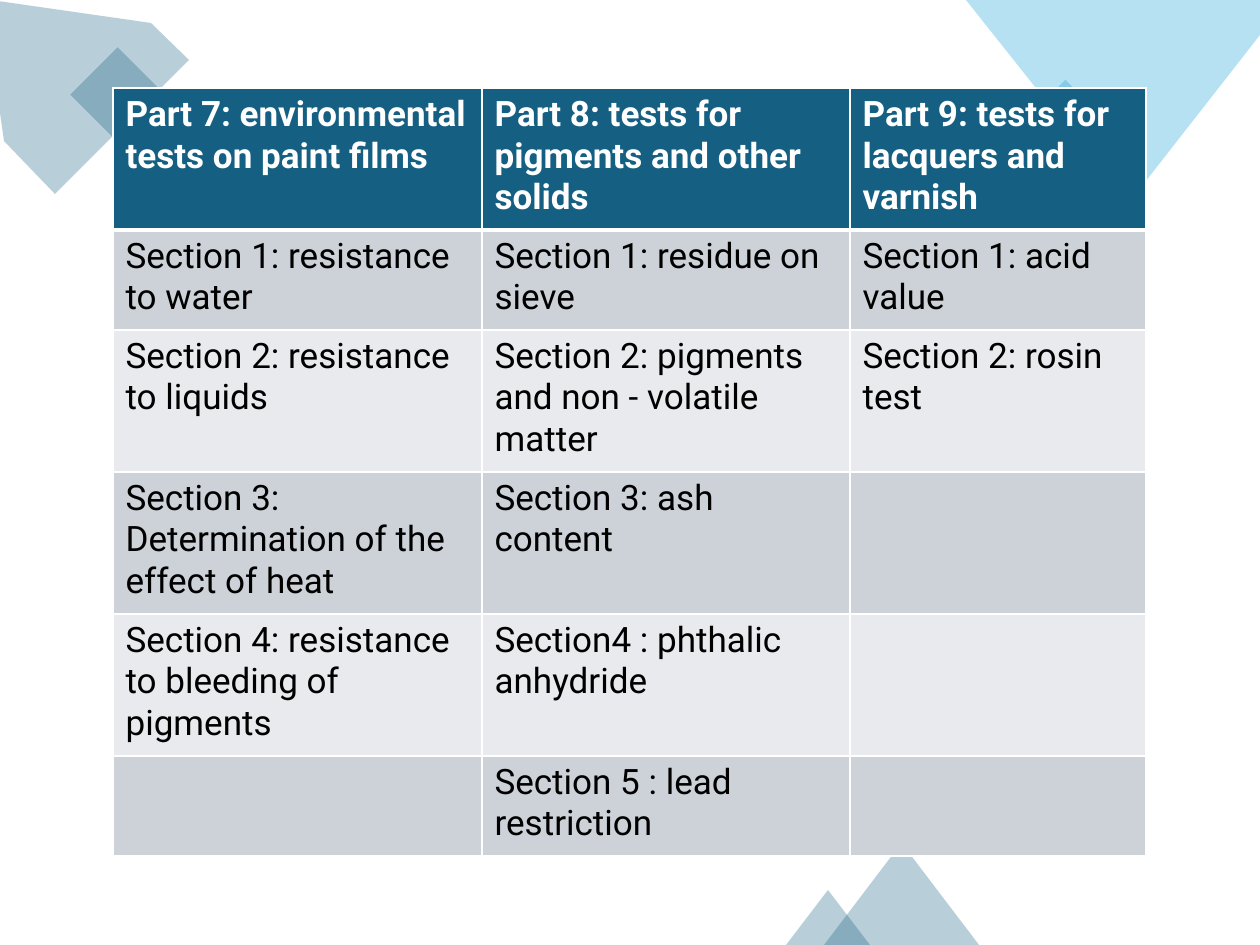
from lxml import etree
from pptx import Presentation
from pptx.dml.color import RGBColor
from pptx.enum.shapes import MSO_SHAPE
from pptx.oxml.ns import qn
from pptx.util import Pt

RECTANGLE = MSO_SHAPE.RECTANGLE
TRIANGLE = MSO_SHAPE.ISOSCELES_TRIANGLE

EMU_PER_PX = 914400 / 126
COLORS = {
    "teal": "156082",
    "sky": "0F9ED5",
    "band_dark": "CCD2D8",
    "band_light": "E8EAED",
    "white": "FFFFFF",
    "black": "000000",
}

TEST_ROWS = [
    ["Part 7: environmental tests on paint films",
     "Part 8: tests for pigments and other solids",
     "Part 9: tests for lacquers and varnish"],
    ["Section 1: resistance to water", "Section 1: residue on sieve",
     "Section 1: acid value"],
    ["Section 2: resistance to liquids",
     "Section 2: pigments and non - volatile matter",
     "Section 2: rosin test"],
    ["Section 3: Determination of the effect of heat",
     "Section 3: ash content", ""],
    ["Section 4: resistance to bleeding of pigments",
     "Section4 : phthalic anhydride", ""],
    ["", "Section 5 : lead restriction", ""],
]
COLUMN_WIDTHS = [369, 368, 296]
ROW_HEIGHTS = [142, 100, 142, 142, 142, 100]


def px(length):
    return round(length * EMU_PER_PX)


def rgb(name):
    return RGBColor.from_string(COLORS[name])


class SlideBuilder:
    font = "Roboto"
    text_size = 20
    opacity = 30
    thin_border, header_border = 1, 3

    def __init__(self, slide):
        self.slide = slide

    def tint(self, shape, color):
        """Give a decoration its translucent fill, without line or shadow."""
        shape.shadow.inherit = False
        shape.line.fill.background()
        shape.fill.solid()
        shape.fill.fore_color.rgb = rgb(color)
        fill_color = shape.fill._xPr.find(qn("a:solidFill"))[0]
        etree.SubElement(fill_color, qn("a:alpha"), val=str(self.opacity * 1000))

    def preset(self, kind, box, color, rotation=0):
        shape = self.slide.shapes.add_shape(kind, *map(px, box))
        shape.rotation = rotation
        self.tint(shape, color)

    def polygon(self, points, color):
        outline = self.slide.shapes.build_freeform(*points[0], scale=EMU_PER_PX)
        outline.add_line_segments(points[1:], close=True)
        self.tint(outline.convert_to_shape(), color)

    def border(self, cell, side, width):
        line = etree.SubElement(cell._tc.get_or_add_tcPr(), qn(f"a:ln{side}"),
                                w=str(Pt(width)))
        fill = etree.SubElement(line, qn("a:solidFill"))
        etree.SubElement(fill, qn("a:srgbClr"), val=COLORS["white"])

    def cell(self, cell, text, fill, color, bold, top, bottom):
        widths = {"L": self.thin_border, "R": self.thin_border,
                  "T": top, "B": bottom}
        for side, width in widths.items():
            self.border(cell, side, width)
        cell.fill.solid()
        cell.fill.fore_color.rgb = rgb(fill)
        if text:
            run = cell.text_frame.paragraphs[0].add_run()
            run.text = text
            run.font.name = self.font
            run.font.size = Pt(self.text_size)
            run.font.bold = bold
            run.font.color.rgb = rgb(color)

    def table(self, left, top, widths, heights, rows):
        box = (left, top, sum(widths), sum(heights))
        table = self.slide.shapes.add_table(
            len(rows), len(widths), *map(px, box)).table
        for column, width in zip(table.columns, widths):
            column.width = px(width)
        for row, height in zip(table.rows, heights):
            row.height = px(height)
        for r, texts in enumerate(rows):
            header = r == 0
            band = "band_dark" if r % 2 else "band_light"
            for c, text in enumerate(texts):
                self.cell(
                    table.cell(r, c), text,
                    fill="teal" if header else band,
                    color="white" if header else "black",
                    bold=header,
                    top=self.header_border if r == 1 else self.thin_border,
                    bottom=self.header_border if header else self.thin_border)


def main():
    deck = Presentation()
    deck.slide_width, deck.slide_height = px(1260), px(945)
    builder = SlideBuilder(deck.slides.add_slide(deck.slide_layouts[6]))

    # Top left corner
    builder.polygon([(151, 23), (-16, -1), (4, 141), (55, 194), (189, 60)], "teal")
    builder.preset(RECTANGLE, (92, 58, 67, 89), "teal", rotation=315)

    # Top right corner
    builder.preset(RECTANGLE, (1038, 91, 71, 94), "sky", rotation=315)
    builder.polygon([(1260, 0), (966, 0), (1128, 204), (1260, 35)], "sky")

    # Bottom edge
    builder.preset(TRIANGLE, (824, 843, 155, 102), "teal")
    builder.preset(TRIANGLE, (786, 890, 84, 55), "teal")

    # Test methods by part
    builder.table(113, 88, COLUMN_WIDTHS, ROW_HEIGHTS, TEST_ROWS)

    deck.save("out.pptx")


if __name__ == "__main__":
    main()
